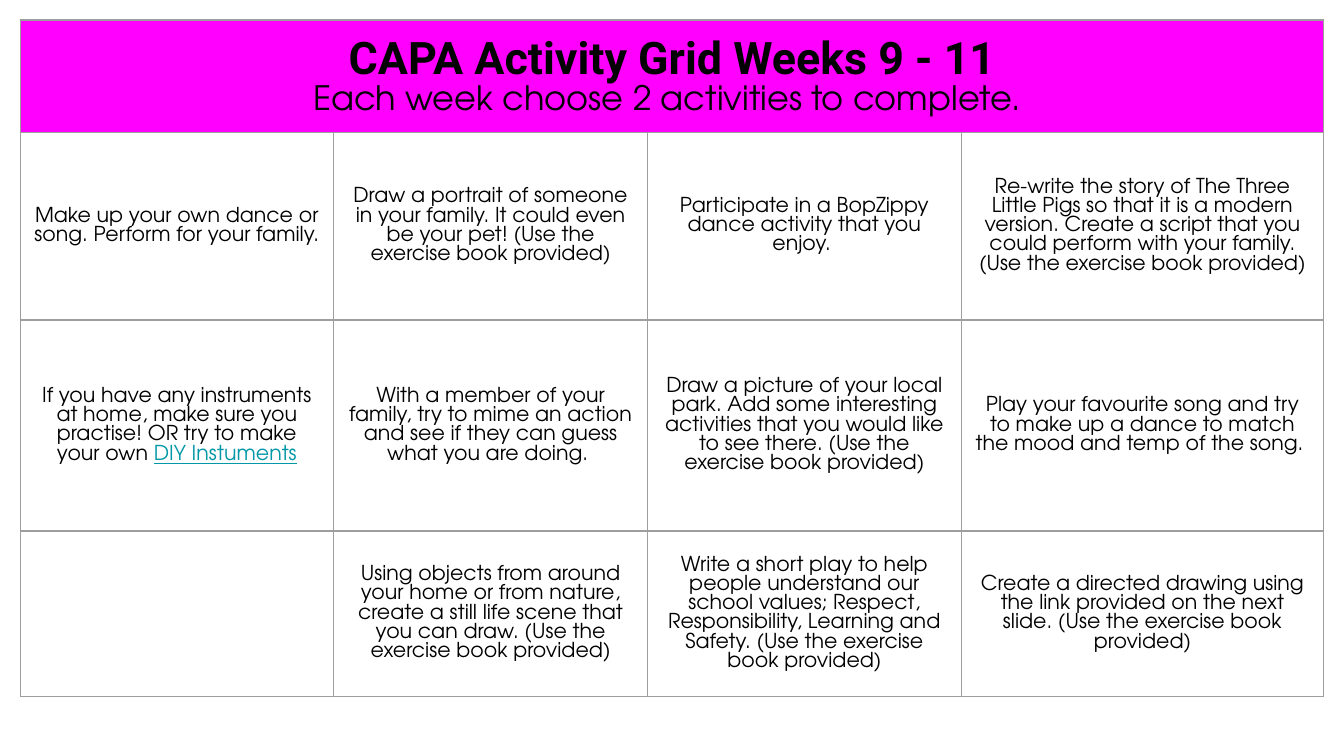
from collections import namedtuple
from dataclasses import dataclass

from lxml import etree
from pptx import Presentation
from pptx import util as u
from pptx.dml.color import RGBColor
from pptx.enum import text
from pptx.oxml import ns

Box = namedtuple("Box", "left top width height")


@dataclass(frozen=True)
class Theme:
    banner: str = "FF00FF"
    paper: str = "FFFFFF"
    ink: str = "000000"
    link: str = "0097A7"
    rule: str = "9E9E9E"
    rule_width: float = 0.75
    heading_font: str = "Roboto"
    body_font: str = "TeX Gyre Adventor"
    heading_size: int = 24
    subheading_size: int = 18
    body_size: int = 11


THEME = Theme()
HEADING = {"name": THEME.heading_font, "size": u.Pt(THEME.heading_size), "bold": True}
SUBHEADING = {"name": THEME.body_font, "size": u.Pt(THEME.subheading_size), "bold": False}
BODY = {"name": THEME.body_font, "size": u.Pt(THEME.body_size), "bold": False}
LINK = {**BODY, "underline": True}

COLUMN_WIDTHS = (5.93, 5.93, 5.93, 6.85)
ROW_HEIGHTS = (2.12, 3.55, 3.99, 3.12)
MARGIN = u.Cm(0.25)

BANNER = [
    [("CAPA Activity Grid Weeks 9 - 11", HEADING, THEME.ink)],
    [("Each week choose 2 activities to complete. ", SUBHEADING, THEME.ink)],
]
LINK_TEXT = "DIY Instuments"
ACTIVITIES = [
    [
        "Make up your own dance or song. Perform for your family. ",
        "Draw a portrait of someone in your family. It could even be your pet! "
        "(Use the exercise book provided)",
        "Participate in a BopZippy dance activity that you enjoy. ",
        "Re-write the story of The Three Little Pigs so that it is a modern version. "
        "Create a script that you could perform with your family. "
        "(Use the exercise book provided)",
    ],
    [
        "If you have any instruments at home, make sure you practise! "
        "OR try to make your own " + LINK_TEXT,
        "With a member of your family, try to mime an action and see if they can "
        "guess what you are doing. ",
        "Draw a picture of your local park. Add some interesting activities that you "
        "would like to see there. (Use the exercise book provided)",
        "Play your favourite song and try to make up a dance to match the mood and "
        "temp of the song. ",
    ],
    [
        "",
        "Using objects from around your home or from nature, create a still life scene "
        "that you can draw. (Use the exercise book provided)",
        "Write a short play to help people understand our school values; Respect, "
        "Responsibility, Learning and Safety. (Use the exercise book provided)",
        "Create a directed drawing using the link provided on the next slide. "
        "(Use the exercise book provided)",
    ],
]


def set_attributes(target, values):
    for name, value in values.items():
        setattr(target, name, value)


def activity_spans(words):
    before, link, after = words.partition(LINK_TEXT)
    spans = [(before, BODY, THEME.ink), (link, LINK, THEME.link), (after, BODY, THEME.ink)]
    return [span for span in spans if span[0]]


def write_cell(cell, paragraphs, anchor):
    cell.vertical_anchor = anchor
    for index, spans in enumerate(paragraphs):
        frame = cell.text_frame
        para = frame.add_paragraph() if index else frame.paragraphs[0]
        para.alignment = text.PP_ALIGN.CENTER
        for words, values, colour in spans:
            span = para.add_run()
            span.text = words
            set_attributes(span.font, values)
            span.font.color.rgb = RGBColor.from_string(colour)


def style_cell(cell, fill):
    set_attributes(cell, {f"margin_{side}": MARGIN for side in ("left", "right", "top", "bottom")})
    properties = cell._tc.get_or_add_tcPr()
    for side in ("a:lnL", "a:lnR", "a:lnT", "a:lnB"):
        line = etree.SubElement(properties, ns.qn(side), w=str(u.Pt(THEME.rule_width)))
        solid = etree.SubElement(line, ns.qn("a:solidFill"))
        etree.SubElement(solid, ns.qn("a:srgbClr"), val=THEME.rule)
    cell.fill.solid()
    cell.fill.fore_color.rgb = RGBColor.from_string(fill)


def add_activity_grid(page, box):
    rows, columns = len(ROW_HEIGHTS), len(COLUMN_WIDTHS)
    table = page.shapes.add_table(rows, columns, *box).table
    set_attributes(table, {"first_row": False, "horz_banding": False})
    for column, width in zip(table.columns, COLUMN_WIDTHS):
        column.width = int(box.width * width / sum(COLUMN_WIDTHS))
    for row, height in zip(table.rows, ROW_HEIGHTS):
        row.height = int(box.height * height / sum(ROW_HEIGHTS))

    for row in range(rows):
        for column in range(columns):
            style_cell(table.cell(row, column), THEME.paper if row else THEME.banner)
    table.cell(0, 0).merge(table.cell(0, columns - 1))
    write_cell(table.cell(0, 0), BANNER, text.MSO_ANCHOR.TOP)

    for row, activities in enumerate(ACTIVITIES, start=1):
        for column, words in enumerate(activities):
            write_cell(table.cell(row, column), [activity_spans(words)], text.MSO_ANCHOR.MIDDLE)


def main():
    deck = Presentation()
    set_attributes(deck, {"slide_width": u.Cm(25.4), "slide_height": u.Cm(14.29)})
    page = deck.slides.add_slide(deck.slide_layouts.get_by_name("Blank"))
    box = Box(u.Cm(0.38), u.Cm(0.38), u.Cm(sum(COLUMN_WIDTHS)), u.Cm(sum(ROW_HEIGHTS)))
    add_activity_grid(page, box)
    deck.save("out.pptx")


if __name__ == "__main__":
    main()
